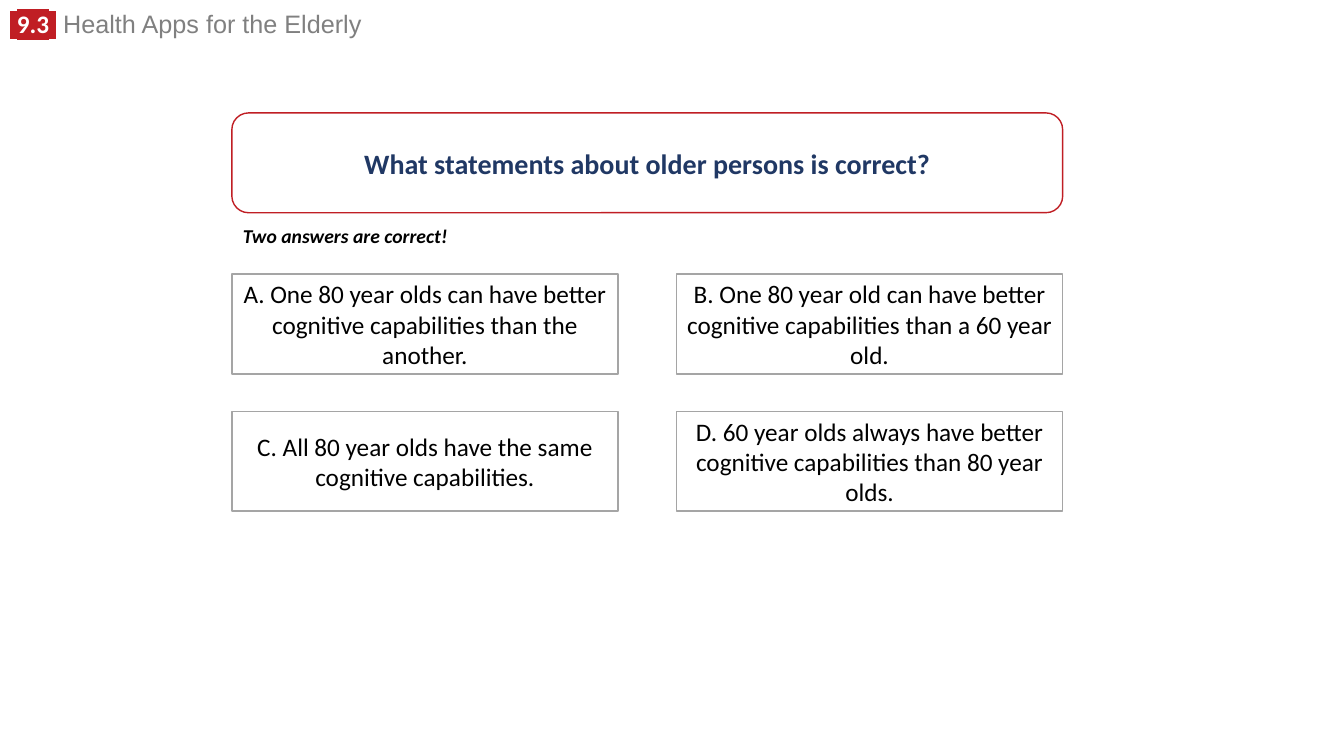
from lxml.etree import SubElement
from pptx import Presentation
from pptx.dml.color import RGBColor
from pptx.enum.shapes import MSO_SHAPE
from pptx.enum.text import MSO_ANCHOR, MSO_AUTO_SIZE, PP_ALIGN
from pptx.oxml.ns import qn
from pptx.util import Inches, Pt

RED = RGBColor(0xC0, 0x1E, 0x24)
NAVY = RGBColor(0x20, 0x38, 0x64)
GRAY = RGBColor(0x80, 0x80, 0x80)
SILVER = RGBColor(0xA5, 0xA5, 0xA5)
BLACK = RGBColor(0, 0, 0)
WHITE = RGBColor(0xFF, 0xFF, 0xFF)

# text, font, color, on red
HEADER = [
    (" ", "Arial", WHITE, True),
    ("9.3", "Calibri", WHITE, True),
    (" ", "Arial", WHITE, True),
    (" Health Apps for the Elderly", "Arial", GRAY, False),
]
QUESTION = "What statements about older persons is correct?"
HINT = "Two answers are correct!"
ANSWERS = [
    "A. One 80 year olds can have better cognitive capabilities than the another.",
    "B. One 80 year old can have better cognitive capabilities than a 60 year old.",
    "C. All 80 year olds have the same cognitive capabilities.",
    "D. 60 year olds always have better cognitive capabilities than 80 year olds.",
]

LEFT, HIGH = 2.3, 0.99
WIDE, CELL = 8.24, 3.83
TOP, ROW = 2.72, 1.36


def style(run, size, color, bold=False, face="Calibri"):
    font = run.font
    font.size, font.bold, font.name = Pt(size), bold, face
    font.color.rgb = color


def mark(run, color):
    """Put a highlight behind the run."""
    fill = run.font._element.find(qn("a:solidFill"))
    light = SubElement(run.font._element, qn("a:highlight"))
    SubElement(light, qn("a:srgbClr")).set("val", str(color))
    fill.addnext(light)


def add_text(slide, left, top, width, height, wrap):
    box = slide.shapes.add_textbox(
        Inches(left), Inches(top), Inches(width), Inches(height))
    frame = box.text_frame
    frame.word_wrap = wrap
    frame.auto_size = MSO_AUTO_SIZE.SHAPE_TO_FIT_TEXT
    return frame.paragraphs[0]


def add_card(slide, kind, left, top, width, text, line, size, color, bold):
    card = slide.shapes.add_shape(
        kind, Inches(left), Inches(top), Inches(width), Inches(HIGH))
    card.shadow.inherit = False
    card.fill.solid()
    card.fill.fore_color.rgb = WHITE
    card.line.color.rgb = line
    card.line.width = Pt(1)
    frame = card.text_frame
    frame.word_wrap = True
    frame.vertical_anchor = MSO_ANCHOR.MIDDLE
    frame.text = text
    para = frame.paragraphs[0]
    para.alignment = PP_ALIGN.CENTER
    style(para.runs[0], size, color, bold)


def main():
    deck = Presentation()
    deck.slide_width, deck.slide_height = Inches(13.33), Inches(7.5)
    slide = deck.slides.add_slide(deck.slide_layouts[6])

    head = add_text(slide, 0, 0.09, 9.52, 0.35, True)
    head.line_spacing = 0.8
    for text, face, color, on_red in HEADER:
        run = head.add_run()
        run.text = text
        style(run, 18, color, on_red, face)
        if on_red:
            mark(run, RED)

    add_card(slide, MSO_SHAPE.ROUNDED_RECTANGLE, LEFT, 1.12, WIDE,
             QUESTION, RED, 20, NAVY, True)

    hint = add_text(slide, 2.31, 2.17, 2.24, 0.34, False)
    hint.text = HINT
    style(hint.runs[0], 14, BLACK, True)
    hint.runs[0].font.italic = True

    for i, answer in enumerate(ANSWERS):
        row, col = divmod(i, 2)
        add_card(slide, MSO_SHAPE.RECTANGLE, LEFT + col * (WIDE - CELL),
                 TOP + row * ROW, CELL, answer, SILVER, 18, BLACK, False)

    deck.save("out.pptx")


if __name__ == "__main__":
    main()
